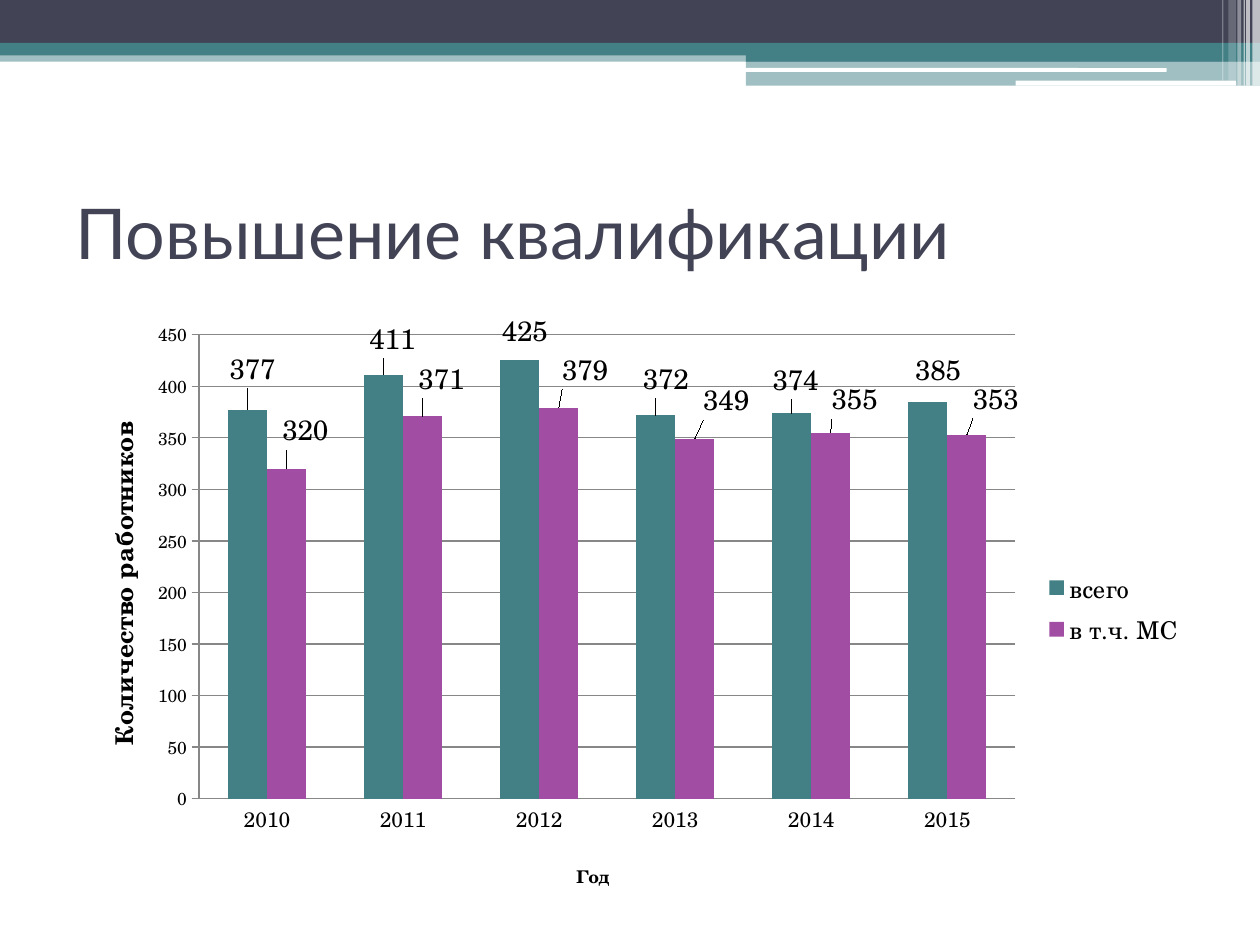
import pptx
import pptx.chart.data
import pptx.dml.color
import pptx.enum.chart
import pptx.enum.shapes
import pptx.enum.text
import pptx.oxml
import pptx.oxml.ns
import pptx.util
from lxml import etree

Inches = pptx.util.Inches
Shape = pptx.enum.shapes.MSO_SHAPE
Tick = pptx.enum.chart.XL_TICK_MARK

DARK, TEAL, PURPLE, WHITE, GRAY = "424456", "438086", "A04DA3", "FFFFFF", "878787"
HEAD, BODY = "Lato", "TeX Gyre Schola"
TITLE = "Повышение квалификации"

# left, top, width, height, colour, opacity in percent
BANDS = [
    (0, 0.4, 10, 0.09, TEAL, 50),
    (0, 0, 10, 0.34, DARK, 100),
    (0, 0.34, 10, 0.1, TEAL, 100),
    (5.92, 0.39, 4.08, 0.1, TEAL, 100),
    (5.92, 0.48, 4.08, 0.2, TEAL, 50),
]
SLITS = [
    (5.91, 0.54, 3.35, 0.03, WHITE, 100),
    (8.06, 0.64, 1.75, 0.04, WHITE, 100),
]
# left, width, height, opacity in percent
STRIPES = [
    (9.94, 0.06, 0.68, 65),
    (9.89, 0.03, 0.68, 65),
    (9.87, 0.01, 0.68, 60),
    (9.82, 0.03, 0.68, 40),
    (9.75, 0.06, 0.64, 20),
    (9.7, 0.01, 0.64, 30),
]

YEARS = ["2010", "2011", "2012", "2013", "2014", "2015"]
# name, colour, values, label shifts in hundredths of an inch
SERIES = [
    ("всего", TEAL, [377, 411, 425, 372, 374, 385],
     [(4, -13), (7, -9), (4, -4), (8, -9), (3, -7), (8, -6)]),
    ("в т.ч. МС", PURPLE, [320, 371, 379, 349, 355, 353],
     [(15, -11), (15, -10), (21, -11), (25, -11), (19, -7), (23, -9)]),
]
CHART = (0.5, 2.46, 9, 4.73)


def rgb(code):
    return pptx.dml.color.RGBColor.from_string(code)


def style(font, size, color="000000", face=BODY, bold=False):
    font.size = pptx.util.Pt(size)
    font.color.rgb = rgb(color)
    font.name = face
    font.bold = bold


def write(frame, text, **form):
    frame.text = text
    style(frame.paragraphs[0].runs[0].font, **form)


def block(slide, kind, left, top, width, height, color, alpha):
    box = slide.shapes.add_shape(kind, *map(Inches, (left, top, width, height)))
    box.shadow.inherit = False
    box.fill.solid()
    box.fill.fore_color.rgb = rgb(color)
    box.line.fill.background()
    if alpha < 100:
        tint = box.element.xpath(".//a:solidFill/a:srgbClr")[0]
        etree.SubElement(tint, pptx.oxml.ns.qn("a:alpha")).set("val", str(alpha * 1000))


def place(node, index, **parts):
    """Give a chart part a manual layout, as its child number index."""
    for old in node.xpath("./c:layout"):
        node.remove(old)
    tags = "".join(f'<c:{key} val="{val}"/>' for key, val in parts.items())
    space = pptx.oxml.ns.nsdecls("c")
    node.insert(index, pptx.oxml.parse_xml(
        f"<c:layout {space}><c:manualLayout>{tags}</c:manualLayout></c:layout>"))


def dress(axis, text, ticks, tick, left, top, **form):
    axis.major_tick_mark = tick
    axis.minor_tick_mark = Tick.NONE
    axis.format.line.color.rgb = rgb(GRAY)
    style(axis.tick_labels.font, ticks)
    write(axis.axis_title.text_frame, text, bold=True, **form)
    place(axis.axis_title.element, 1, xMode="edge", yMode="edge", x=left, y=top)


def draw(slide):
    data = pptx.chart.data.CategoryChartData()
    data.categories = YEARS
    for name, _, vals, _ in SERIES:
        data.add_series(name, vals)
    kind = pptx.enum.chart.XL_CHART_TYPE.COLUMN_CLUSTERED
    chart = slide.shapes.add_chart(kind, *map(Inches, CHART), data).chart
    chart.has_title = False
    style(chart.font, 10)

    plot = chart.plots[0]
    plot.gap_width = 150
    plot.overlap = 0
    plot.vary_by_categories = False
    for bars, (_, color, _, _) in zip(plot.series, SERIES):
        bars.format.fill.solid()
        bars.format.fill.fore_color.rgb = rgb(color)
        bars.data_labels.show_value = True
        style(bars.data_labels.font, 16)
        for i in range(len(YEARS)):
            label = bars.points[i].data_label
            style(label.font, 16)
            label.position = pptx.enum.chart.XL_LABEL_POSITION.OUTSIDE_END
    shifts = [shift for row in SERIES for shift in row[3]]
    for node, (x, y) in zip(chart.element.xpath(".//c:dLbl"), shifts):
        place(node, 1, x=x / 100 / CHART[2], y=y / 100 / CHART[3])
    place(chart.element.xpath(".//c:plotArea")[0], 0, layoutTarget="inner",
          xMode="edge", yMode="edge", x=0.12, y=0.04, w=0.72, h=0.78)

    dress(chart.category_axis, "Год", 12, Tick.NONE, 0.45, 0.92, size=10)
    scale = chart.value_axis
    dress(scale, "Количество работников", 10, Tick.OUTSIDE, 0.03, 0.18, size=14)
    scale.minimum_scale, scale.maximum_scale, scale.major_unit = 0, 450, 50
    scale.major_gridlines.format.line.color.rgb = rgb(GRAY)

    chart.has_legend = True
    chart.legend.position = pptx.enum.chart.XL_LEGEND_POSITION.RIGHT
    chart.legend.include_in_layout = False
    style(chart.legend.font, 14)


def main():
    deck = pptx.Presentation()
    deck.slide_width, deck.slide_height = Inches(10), Inches(7.5)
    slide = deck.slides.add_slide(deck.slide_layouts[5])

    for band in BANDS:
        block(slide, Shape.RECTANGLE, *band)
    for slit in SLITS:
        block(slide, Shape.ROUNDED_RECTANGLE, *slit)
    for left, width, height, alpha in STRIPES:
        block(slide, Shape.RECTANGLE, left, 0, width, height, WHITE, alpha)

    title = slide.shapes.title
    title.left, title.top, title.width, title.height = map(Inches, (0.5, 1.25, 9, 1.17))
    title.text_frame.vertical_anchor = pptx.enum.text.MSO_ANCHOR.MIDDLE
    write(title.text_frame, TITLE, size=40, color=DARK, face=HEAD)
    title.text_frame.paragraphs[0].alignment = pptx.enum.text.PP_ALIGN.LEFT

    draw(slide)
    deck.save("out.pptx")


if __name__ == "__main__":
    main()
